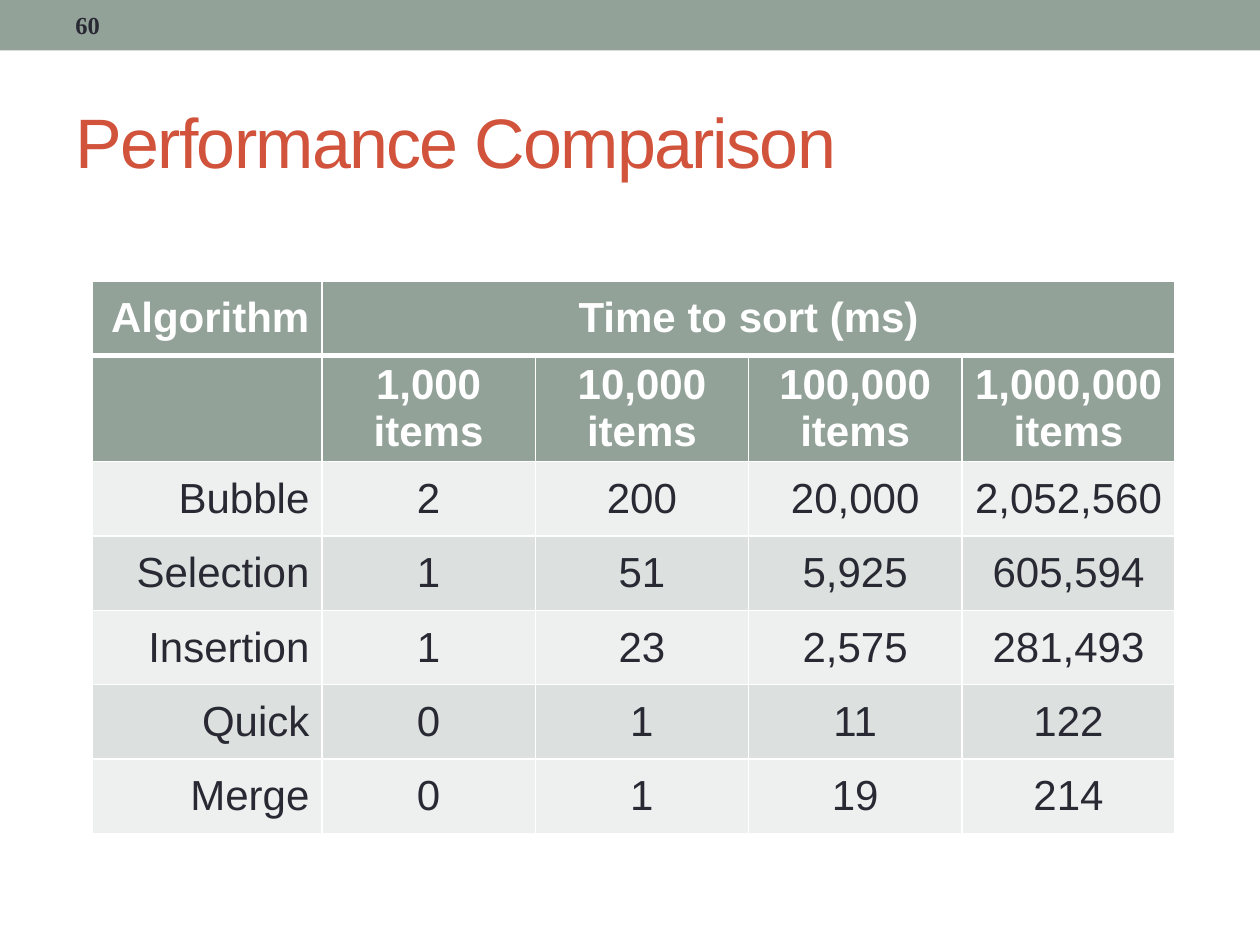
import pptx
import pptx.dml.color
import pptx.enum.shapes
import pptx.enum.text
import pptx.oxml
import pptx.oxml.ns
import pptx.util
from pptx.util import Cm

SAGE, RUST, INK, WHITE = "93A299", "D2533C", "292934", "FFFFFF"
BANDS = ["EEF0EF", "DCE0DE"]
HEADS = 2
ROWS = [
    ["Algorithm", "Time to sort (ms)", "", "", ""],
    ["", "1,000 items", "10,000 items", "100,000 items", "1,000,000 items"],
    ["Bubble", "2", "200", "20,000", "2,052,560"],
    ["Selection", "1", "51", "5,925", "605,594"],
    ["Insertion", "1", "23", "2,575", "281,493"],
    ["Quick", "0", "1", "11", "122"],
    ["Merge", "0", "1", "19", "214"],
]
ALIGN = pptx.enum.text.PP_ALIGN
MIDDLE = pptx.enum.text.MSO_ANCHOR.MIDDLE


def color(code):
    return pptx.dml.color.RGBColor.from_string(code)


def paint(item, code):
    item.fill.solid()
    item.fill.fore_color.rgb = color(code)


def style(para, size, code, bold=False, align=ALIGN.LEFT, face="Arial"):
    para.alignment = align
    font = para.font
    font.name, font.size, font.bold = face, pptx.util.Pt(size), bold
    font.color.rgb = color(code)


def add_bar(slide):
    kind = pptx.enum.shapes.MSO_SHAPE.RECTANGLE
    bar = slide.shapes.add_shape(kind, 0, 0, Cm(25.4), Cm(1.02))
    bar.shadow.inherit = False
    paint(bar, SAGE)
    bar.line.fill.background()


def add_title(slide, text):
    title = slide.shapes.title
    title.left, title.top = Cm(1.27), Cm(1.47)
    title.width, title.height = Cm(22.86), Cm(2.74)
    frame = title.text_frame
    frame.text = text
    frame.vertical_anchor = MIDDLE
    frame.auto_size = pptx.enum.text.MSO_AUTO_SIZE.NONE
    para = frame.paragraphs[0]
    style(para, 40, RUST)
    para._p.pPr.find(pptx.oxml.ns.qn("a:defRPr")).set("spc", "-100")


def add_number(slide, text):
    box = slide.shapes.add_textbox(Cm(1.27), Cm(0.05), Cm(8.05), Cm(0.91))
    frame = box.text_frame
    frame.word_wrap = True
    frame.vertical_anchor = MIDDLE
    frame.text = text
    style(frame.paragraphs[0], 14, INK, True, face="Times New Roman")


def set_edges(cell, top, base):
    """Draw white cell borders; top and base are widths in points."""
    props = cell._tc.get_or_add_tcPr()
    for side, width in zip("LRTB", (1, 1, top, base)):
        props.append(pptx.oxml.parse_xml(
            f'<a:ln{side} {pptx.oxml.ns.nsdecls("a")} w="{pptx.util.Pt(width)}">'
            f'<a:solidFill><a:srgbClr val="{WHITE}"/></a:solidFill></a:ln{side}>'))


def fill_cell(cell, text, row, col):
    head = row < HEADS
    set_edges(cell, 3 if row == 1 else 1, 3 if row == 0 else 1)
    paint(cell, SAGE if head else BANDS[(row - HEADS) % 2])
    cell.vertical_anchor = MIDDLE
    cell.text = text
    style(cell.text_frame.paragraphs[0], 24, WHITE if head else INK, head,
          ALIGN.CENTER if col else ALIGN.RIGHT)


def add_times(slide):
    high, first, other = Cm(1.5), Cm(4.64), Cm(4.3)
    count = len(ROWS[0])
    table = slide.shapes.add_table(
        len(ROWS), count, Cm(1.85), Cm(5.66),
        first + other * (count - 1), high * len(ROWS)).table
    table.horz_banding = False
    for col, column in enumerate(table.columns):
        column.width = other if col else first
    for row, texts in enumerate(ROWS):
        table.rows[row].height = high
        for col, text in enumerate(texts):
            fill_cell(table.cell(row, col), text, row, col)
    table.cell(0, 1).merge(table.cell(0, count - 1))


def main():
    deck = pptx.Presentation()
    deck.slide_width, deck.slide_height = Cm(25.4), Cm(19.05)
    slide = deck.slides.add_slide(deck.slide_layouts[5])
    add_bar(slide)
    add_title(slide, "Performance Comparison")
    add_times(slide)
    add_number(slide, "60")
    deck.save("out.pptx")


if __name__ == "__main__":
    main()
